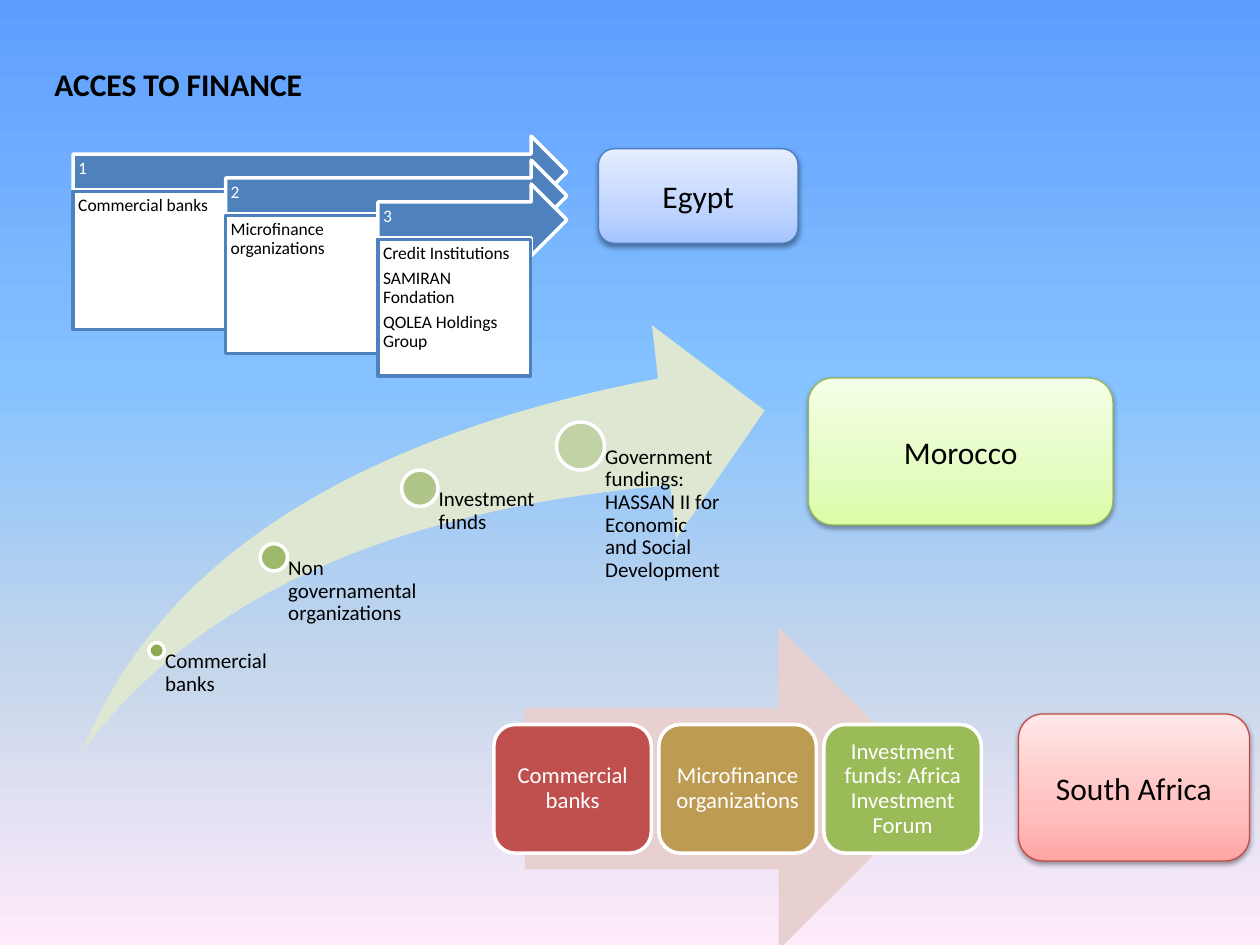
from lxml.etree import SubElement
from pptx import Presentation
from pptx.dml.color import RGBColor
from pptx.enum.shapes import MSO_SHAPE
from pptx.enum.text import MSO_ANCHOR, MSO_AUTO_SIZE, PP_ALIGN
from pptx.oxml.ns import qn
from pptx.util import Pt


def rgb(color):
    return RGBColor.from_string(color)


class SlideBuilder:
    font = "Calibri"
    black = "000000"
    white = "FFFFFF"
    blue = "4F81BD"

    def __init__(self, prs):
        self.s = prs.slides.add_slide(prs.slide_layouts[6])

    def gradient(self, fill, element, stops, angle):
        fill.gradient()
        fill.gradient_angle = angle
        stop_list = next(element.iter(qn("a:gsLst")))
        for old in list(stop_list):
            stop_list.remove(old)
        for position, color in stops:
            stop = SubElement(stop_list, qn("a:gs"), pos=str(position * 1000))
            SubElement(stop, qn("a:srgbClr"), val=color)

    def background(self, stops):
        self.gradient(self.s.background.fill, self.s._element, stops, 270)

    def set_text(self, sp, text, size, color, insets, anchor=MSO_ANCHOR.TOP,
                 align=PP_ALIGN.LEFT, spacing=0.9, after=None, bold=False):
        tf = sp.text_frame
        tf.word_wrap = True
        tf.vertical_anchor = anchor
        tf.margin_left, tf.margin_top, tf.margin_right, tf.margin_bottom = map(Pt, insets)
        tf.text = text
        for p in tf.paragraphs:
            p.alignment = align
            p.line_spacing = spacing
            p.space_after = Pt(size * 0.35 if after is None else after)
            for r in p.runs:
                r.font.name = self.font
                r.font.size = Pt(size)
                r.font.bold = bold
                r.font.color.rgb = rgb(color)

    def text_box(self, box, text, size, insets, **style):
        sp = self.s.shapes.add_textbox(*map(Pt, box))
        self.set_text(sp, text, size, self.black, insets, **style)
        return sp

    def shape(self, kind, box, fill=None, line=None, width=2):
        sp = self.s.shapes.add_shape(kind, *map(Pt, box))
        sp.shadow.inherit = False
        if fill:
            sp.fill.solid()
            sp.fill.fore_color.rgb = rgb(fill)
        if line:
            sp.line.color.rgb = rgb(line)
            sp.line.width = Pt(width)
        else:
            sp.line.fill.background()
        return sp

    def title(self, text):
        sp = self.text_box((24, 32.4, 157, 31), text, 18, (7.2, 3.6, 7.2, 3.6),
                           spacing=1.07, after=8, bold=True)
        sp.text_frame.word_wrap = False
        sp.text_frame.auto_size = MSO_AUTO_SIZE.SHAPE_TO_FIT_TEXT

    def country(self, name, box, colors, line):
        sp = self.shape(MSO_SHAPE.FLOWCHART_ALTERNATE_PROCESS, box, line=line, width=0.75)
        self.gradient(sp.fill, sp._element, zip((0, 35, 100), colors), 90)
        effects = sp._element.spPr.find(qn("a:effectLst"))
        shadow = SubElement(effects, qn("a:outerShdw"), blurRad=str(Pt(3.1)),
                            dist=str(Pt(1.6)), dir="5400000", rotWithShape="0")
        color = SubElement(shadow, qn("a:srgbClr"), val=self.black)
        SubElement(color, qn("a:alpha"), val="38000")
        self.set_text(sp, name, 18, self.black, (7.2, 3.6, 7.2, 3.6), MSO_ANCHOR.MIDDLE,
                      PP_ALIGN.CENTER, spacing=1, after=0)

    def step(self, index, text, height):
        left, top, right = 41.8 + 87.1 * index, 77.8 + 13.7 * index, 324
        arrow = self.shape(MSO_SHAPE.RIGHT_ARROW, (left, top, right - left, 41),
                           self.blue, self.white)
        self.set_text(arrow, str(index + 1), 10, self.white, (2.9, 2.9, 20, 6.5),
                      MSO_ANCHOR.MIDDLE)
        card = self.shape(MSO_SHAPE.RECTANGLE, (left, top + 31.6, 87.1, height),
                          self.white, self.blue)
        self.set_text(card, text, 10, self.black, (2.9, 2.9, 2.9, 2.9))

    def milestone(self, text, left, top, diameter, color, width):
        self.shape(MSO_SHAPE.OVAL, (left, top, diameter, diameter), color, self.white)
        radius = diameter / 2
        x, y, bottom = left + radius, top + radius, 430
        self.text_box((x, y, width, bottom - y), text, 12, (radius + 0.4, 0, 0, 0))

    def tile(self, index, text, color):
        sp = self.shape(MSO_SHAPE.ROUNDED_RECTANGLE, (282.2 + 94.3 * index, 414, 90, 73.5),
                        color, self.white)
        self.set_text(sp, text, 13, self.white, (3.6, 3.6, 3.6, 3.6),
                      MSO_ANCHOR.MIDDLE, PP_ALIGN.CENTER)


def main():
    prs = Presentation()
    prs.slide_width, prs.slide_height = Pt(720), Pt(540)
    b = SlideBuilder(prs)
    b.background([(0, "5E9EFF"), (40, "85C2FF"), (70, "C4D6EB"), (100, "FFEBFA")])
    b.title("ACCES TO FINANCE")

    steps = [
        ("Commercial banks", 79),
        ("Microfinance organizations", 79),
        ("Credit Institutions\nSAMIRAN Fondation\nQOLEA Holdings Group", 78),
    ]
    for i, (text, height) in enumerate(steps):
        b.step(i, text, height)
    b.country("Egypt", (342, 85, 114, 54), ("A4C4FF", "BFD4FF", "E6EEFF"), "4B7EBC")

    swoosh = b.shape(MSO_SHAPE.SWOOSH_ARROW, (46.8, 185.8, 390.2, 244), "DEE7D1")
    swoosh.adjustments[0] = swoosh.adjustments[1] = 0.25
    milestones = [
        ("Commercial banks", 85, 367.2, 9, "8DAA51", 67),
        ("Non governamental organizations", 148.7, 310.7, 15.6, "9EB86C", 82),
        ("Investment funds", 229.5, 268.6, 20.8, "AFC589", 82),
        ("Government fundings: HASSAN II for Economic and Social Development",
         318, 241.2, 27.4, "C1D3A5", 82),
    ]
    for milestone in milestones:
        b.milestone(*milestone)
    b.country("Morocco", (462, 216, 174, 84), ("DAFDA7", "E4FCC2", "F5FFE7"), "98B955")

    b.shape(MSO_SHAPE.RIGHT_ARROW, (300, 358.8, 237, 184), "E8D0D0")
    tiles = [
        ("Commercial banks", "C0504D"),
        ("Microfinance organizations", "BD9B53"),
        ("Investment funds: Africa Investment Forum", "9BBB59"),
    ]
    for i, (text, color) in enumerate(tiles):
        b.tile(i, text, color)
    b.country("South Africa", (582, 408, 132, 84), ("FFA6A5", "FFC0BF", "FFE7E7"), "BF4C48")
    prs.save("out.pptx")


if __name__ == "__main__":
    main()
